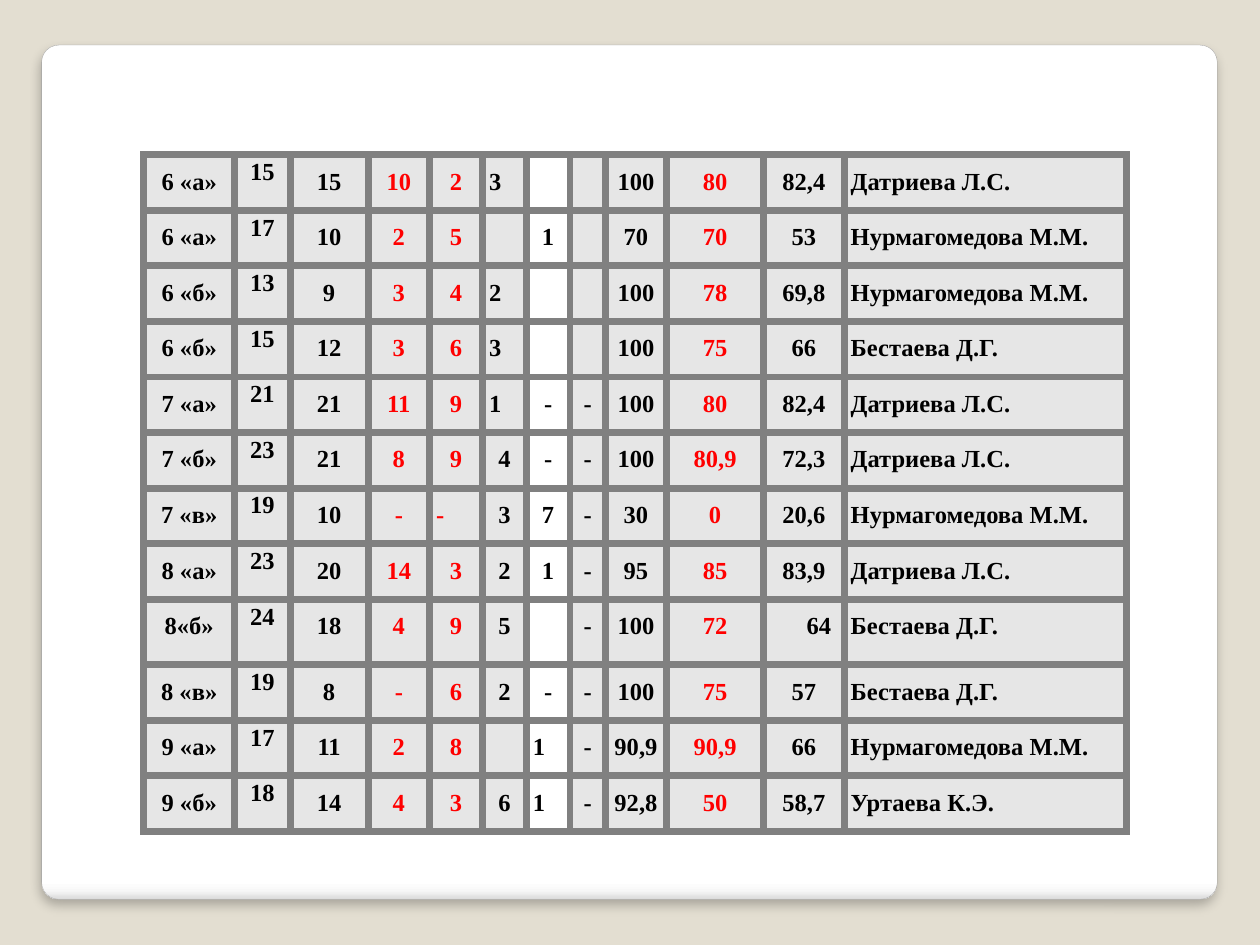
import dataclasses
import typing

import pptx
import pptx.dml.color
import pptx.enum.shapes
import pptx.enum.text
import pptx.oxml
import pptx.oxml.ns
import pptx.util

Cm = pptx.util.Cm
Pt = pptx.util.Pt
CENTER = pptx.enum.text.PP_ALIGN.CENTER
LEFT = pptx.enum.text.PP_ALIGN.LEFT
NAMESPACE = pptx.oxml.ns.nsdecls("a")


@dataclasses.dataclass(frozen=True)
class Theme:
    backdrop: str = "E3DED1"
    card_edge: str = "A4A4A4"
    card_stops: tuple = ((0, "FFFFFF"), (98, "FFFFFF"), (99, "F7F7F7"), (100, "DADADA"))
    shadow: str = "000000"
    cell: str = "E6E6E6"
    border: str = "808080"
    text: str = "000000"
    accent: str = "FF0000"
    font: str = "Times New Roman"
    text_size: float = 14
    border_width: float = 4.5


THEME = Theme()


class Column(typing.NamedTuple):
    width: float
    color: str = THEME.text
    spacing: float = 1.5
    align: int = CENTER
    filled: bool = True


class ClassResult(typing.NamedTuple):
    class_name: str
    enrolled: str
    wrote: str
    fives: str
    fours: str
    threes: str
    twos: str
    ones: str
    success: str
    quality: str
    average: str
    teacher: str


COLUMNS = ClassResult(
    class_name=Column(1.83),
    enrolled=Column(1.12, spacing=1.15),
    wrote=Column(1.57),
    fives=Column(1.24, THEME.accent),
    fours=Column(1.07, THEME.accent),
    threes=Column(0.88),
    twos=Column(0.88, filled=False),
    ones=Column(0.71),
    success=Column(1.24),
    quality=Column(1.95, THEME.accent),
    average=Column(1.63),
    teacher=Column(5.69, align=LEFT),
)

RESULTS = [
    ClassResult("6 «а»", "15", "15", "10", "2", "3", "", "", "100", "80", "82,4", "Датриева Л.С."),
    ClassResult("6 «а»", "17", "10", "2", "5", "", "1", "", "70", "70", "53", "Нурмагомедова М.М."),
    ClassResult("6 «б»", "13", "9", "3", "4", "2", "", "", "100", "78", "69,8", "Нурмагомедова М.М."),
    ClassResult("6 «б»", "15", "12", "3", "6", "3", "", "", "100", "75", "66", "Бестаева Д.Г."),
    ClassResult("7 «а»", "21", "21", "11", "9", "1", "-", "-", "100", "80", "82,4", "Датриева Л.С."),
    ClassResult("7 «б»", "23", "21", "8", "9", "4", "-", "-", "100", "80,9", "72,3", "Датриева Л.С."),
    ClassResult("7 «в»", "19", "10", "-", "-", "3", "7", "-", "30", "0", "20,6", "Нурмагомедова М.М."),
    ClassResult("8 «а»", "23", "20", "14", "3", "2", "1", "-", "95", "85", "83,9", "Датриева Л.С."),
    ClassResult("8«б»", "24", "18", "4", "9", "5", "", "-", "100", "72", "64", "Бестаева Д.Г."),
    ClassResult("8 «в»", "19", "8", "-", "6", "2", "-", "-", "100", "75", "57", "Бестаева Д.Г."),
    ClassResult("9 «а»", "17", "11", "2", "8", "", "1", "-", "90,9", "90,9", "66", "Нурмагомедова М.М."),
    ClassResult("9 «б»", "18", "14", "4", "3", "6", "1", "-", "92,8", "50", "58,7", "Уртаева К.Э."),
]

LEFT_ALIGNED = {(row, "threes") for row in range(5)} | {
    (6, "fours"), (8, "average"), (10, "twos"), (11, "twos"),
}
CELL_INSETS = {(8, "average"): 0.87}
ROW_HEIGHT = 1.12
ROW_HEIGHTS = {8: 1.32}


def rgb(value: str) -> pptx.dml.color.RGBColor:
    return pptx.dml.color.RGBColor.from_string(value)


def draw_card(slide) -> None:
    card = slide.shapes.add_shape(
        pptx.enum.shapes.MSO_SHAPE.ROUNDED_RECTANGLE,
        Cm(0.84), Cm(0.91), Cm(23.7), Cm(17.22),
    )
    card.adjustments[0] = 0.02
    card.fill.gradient()
    card.fill.gradient_angle = 270
    stops = card.fill._fill._gradFill.find(pptx.oxml.ns.qn("a:gsLst"))
    for stop in list(stops):
        stops.remove(stop)
    for position, color in THEME.card_stops:
        stops.append(pptx.oxml.parse_xml(
            f'<a:gs {NAMESPACE} pos="{position * 1000}"><a:srgbClr val="{color}"/></a:gs>'
        ))
    card.line.color.rgb = rgb(THEME.card_edge)
    card.line.width = Pt(0.16)
    card.shadow.inherit = False
    effects = card._element.spPr.find(pptx.oxml.ns.qn("a:effectLst"))
    effects.append(pptx.oxml.parse_xml(
        f'<a:outerShdw {NAMESPACE} blurRad="{Pt(6)}" dist="{Pt(4)}" dir="5400000" '
        f'algn="tl" rotWithShape="0"><a:srgbClr val="{THEME.shadow}">'
        '<a:alpha val="25000"/></a:srgbClr></a:outerShdw>'
    ))


def outline_cell(cell) -> None:
    properties = cell._tc.get_or_add_tcPr()
    for position, side in enumerate(("lnL", "lnR", "lnT", "lnB")):
        properties.insert(position, pptx.oxml.parse_xml(
            f'<a:{side} {NAMESPACE} w="{Pt(THEME.border_width)}"><a:solidFill>'
            f'<a:srgbClr val="{THEME.border}"/></a:solidFill></a:{side}>'
        ))


def fill_cell(cell, value: str, column: Column, align: int, inset: float) -> None:
    cell.margin_left, cell.margin_right = Cm(inset), Cm(0.13)
    cell.margin_top = cell.margin_bottom = 0
    if column.filled:
        cell.fill.solid()
        cell.fill.fore_color.rgb = rgb(THEME.cell)
    else:
        cell.fill.background()
    outline_cell(cell)
    if not value:
        return
    paragraph = cell.text_frame.paragraphs[0]
    paragraph.alignment = align
    paragraph.line_spacing = column.spacing
    run = paragraph.add_run()
    run.text = value
    run.font.name = THEME.font
    run.font.size = Pt(THEME.text_size)
    run.font.bold = True
    run.font.color.rgb = rgb(column.color)


def draw_results(slide, results: list[ClassResult]) -> None:
    heights = [ROW_HEIGHTS.get(row, ROW_HEIGHT) for row in range(len(results))]
    table = slide.shapes.add_table(
        len(results), len(COLUMNS), Cm(2.9), Cm(3.12),
        Cm(sum(column.width for column in COLUMNS)), Cm(sum(heights)),
    ).table
    table.first_row = table.horz_banding = False
    for index, column in enumerate(COLUMNS):
        table.columns[index].width = Cm(column.width)
    for row, result in enumerate(results):
        table.rows[row].height = Cm(heights[row])
        for index, (field, column) in enumerate(zip(ClassResult._fields, COLUMNS)):
            align = LEFT if (row, field) in LEFT_ALIGNED else column.align
            inset = CELL_INSETS.get((row, field), 0.13)
            fill_cell(table.cell(row, index), result[index], column, align, inset)


def main() -> None:
    deck = pptx.Presentation()
    deck.slide_width, deck.slide_height = Cm(25.4), Cm(19.05)
    slide = deck.slides.add_slide(deck.slide_layouts[6])
    slide.background.fill.solid()
    slide.background.fill.fore_color.rgb = rgb(THEME.backdrop)
    draw_card(slide)
    draw_results(slide, RESULTS)
    deck.save("out.pptx")


if __name__ == "__main__":
    main()
